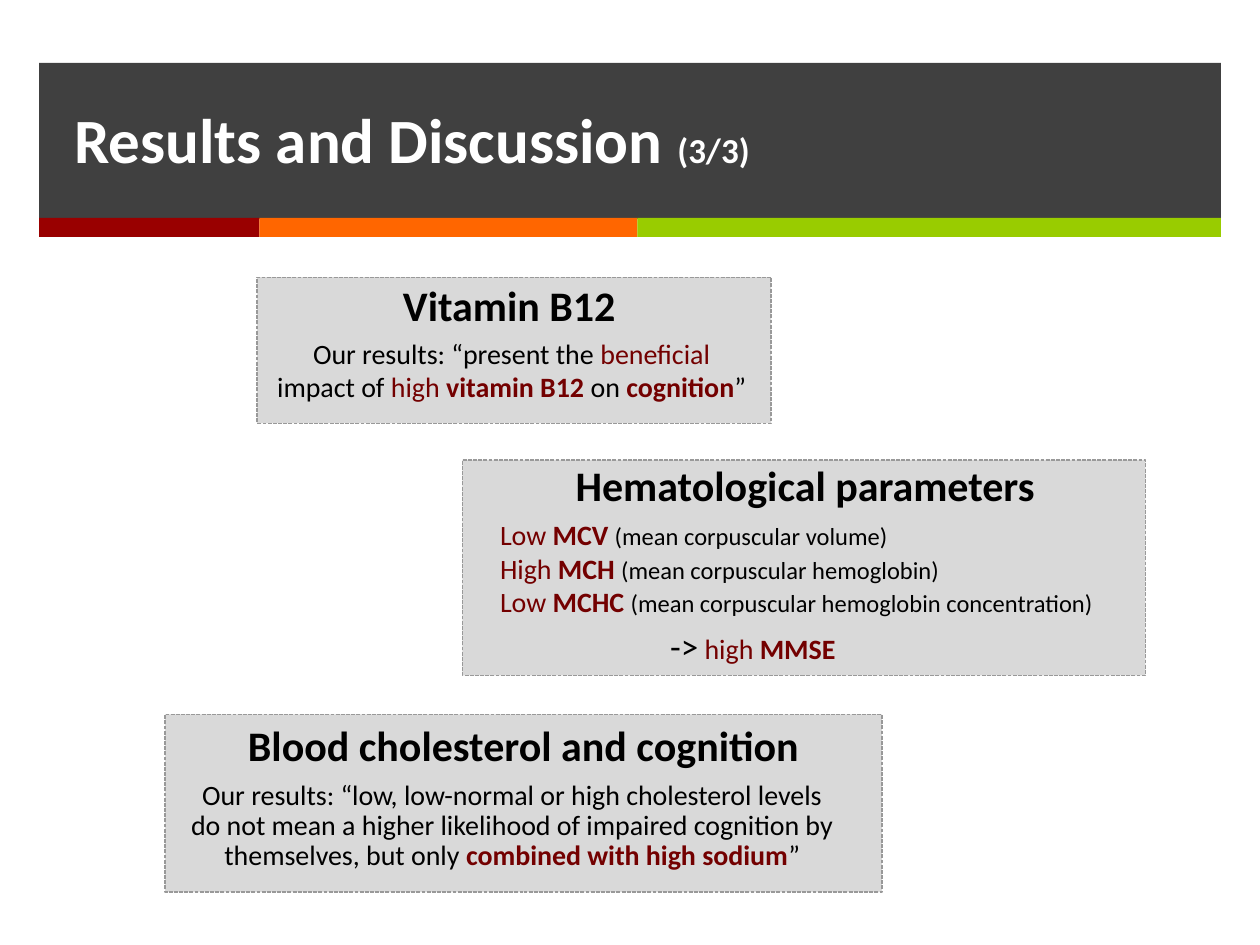
"""Build the third results slide: a title banner above three grey finding cards."""
from dataclasses import dataclass, field
from typing import Any, NamedTuple

import pptx
import pptx.dml.color
import pptx.enum.dml
import pptx.enum.shapes
import pptx.enum.text
import pptx.util

Align = pptx.enum.text.PP_ALIGN
COLUMNS, ROWS = 100, 75


class Box(NamedTuple):
    """Hold a place in columns and rows of the slide grid."""
    left: float
    top: float
    width: float
    height: float


class Run(NamedTuple):
    """Hold a piece of text in one style."""
    text: str
    size: int
    color: str
    bold: bool = False


@dataclass(frozen=True)
class Theme:
    """Hold the colours, type sizes and font of the slide."""
    font: str = "Calibri"
    banner: str = "404040"
    stripes: tuple[str, ...] = ("990000", "FF6600", "99CC00")
    card: str = "D9D9D9"
    border: str = "999999"
    ink: str = "000000"
    accent: str = "730000"
    light: str = "FFFFFF"
    title: int = 36
    heading: int = 24
    large: int = 20
    body: int = 16
    small: int = 14


THEME = Theme()


@dataclass(frozen=True)
class TextBlock:
    """Describe a text box and its paragraphs."""
    box: Box
    paragraphs: list[list[Run]]
    format: dict[str, Any] = field(default_factory=dict)


@dataclass(frozen=True)
class Card:
    """Describe a dashed card and the text it holds."""
    box: Box
    blocks: list[TextBlock]


def plain(text: str) -> Run:
    """Return body text in ink."""
    return Run(text, THEME.body, THEME.ink)


def accent(text: str, bold: bool = False) -> Run:
    """Return body text in the accent colour."""
    return Run(text, THEME.body, THEME.accent, bold)


def heading(text: str) -> list[list[Run]]:
    """Return the single paragraph of a card heading."""
    return [[Run(text, THEME.heading, THEME.ink, True)]]


def measure(level: str, name: str, meaning: str) -> list[Run]:
    """Return one line of the blood measures list."""
    return [accent(f"{level} "), accent(f"{name} ", True),
            Run(f"({meaning})", THEME.small, THEME.ink)]


TITLE = TextBlock(Box(4.9, 7.5, 72.3, 7.1), [[
    Run("Results and Discussion ", THEME.title, THEME.light, True),
    Run("(3/3)", THEME.large, THEME.light, True)]], {"alignment": Align.LEFT})

CARDS = [
    Card(Box(20.4, 22, 40.8, 11.6), [
        TextBlock(Box(31, 21.7, 20.3, 5), heading("Vitamin B12")),
        TextBlock(Box(20.7, 26.2, 39.8, 6.4), [[
            plain("Our results: “present the "), accent("beneficial"),
            plain(" impact of "), accent("high "), accent("vitamin B12 ", True),
            plain("on "), accent("cognition", True), plain("”")]],
            {"alignment": Align.CENTER}),
    ]),
    Card(Box(36.7, 36.5, 54.2, 17.1), [
        TextBlock(Box(44.7, 36, 38.9, 5), heading("Hematological parameters")),
        TextBlock(Box(38.7, 40.6, 49.9, 9.1), [
            measure("Low", "MCV", "mean corpuscular volume"),
            measure("High", "MCH", "mean corpuscular hemoglobin"),
            measure("Low", "MCHC", "mean corpuscular hemoglobin concentration")]),
        TextBlock(Box(52.2, 49.7, 23.6, 3.8), [[
            Run("->", THEME.large, THEME.ink), plain(" "),
            accent("high "), accent("MMSE", True)]], {"line_spacing": 0.8}),
    ]),
    Card(Box(13.1, 56.7, 56.9, 14.1), [
        TextBlock(Box(17.3, 56.6, 48.5, 5), heading("Blood cholesterol and cognition"),
                  {"alignment": Align.CENTER}),
        TextBlock(Box(13.9, 61.5, 53.5, 8.3), [[
            plain("Our results: “low, low-normal or high cholesterol levels do not mean "
                  "a higher likelihood of impaired cognition by themselves, but only "),
            accent("combined with high sodium", True), plain("”")]],
            {"alignment": Align.CENTER, "line_spacing": 0.9}),
    ]),
]


def rgb(color: str) -> pptx.dml.color.RGBColor:
    """Return a colour from its hex code."""
    return pptx.dml.color.RGBColor.from_string(color)


def apply(target: Any, values: dict[str, Any]) -> None:
    """Set each named attribute on the target."""
    for name, value in values.items():
        setattr(target, name, value)


def place(box: Box) -> dict[str, int]:
    """Return the slide lengths of a grid box."""
    column = pptx.util.Inches(10) / COLUMNS
    row = pptx.util.Inches(7.5) / ROWS
    return {"left": round(box.left * column), "top": round(box.top * row),
            "width": round(box.width * column), "height": round(box.height * row)}


def draw_rectangle(slide: Any, box: Box, color: str) -> Any:
    """Draw a flat rectangle without a line."""
    shape = slide.shapes.add_shape(
        pptx.enum.shapes.MSO_SHAPE.RECTANGLE, **place(box))
    shape.shadow.inherit = False
    shape.fill.solid()
    shape.fill.fore_color.rgb = rgb(color)
    shape.line.fill.background()
    return shape


def write_text(shape: Any, block: TextBlock) -> None:
    """Write the paragraphs of a block into a shape."""
    frame = shape.text_frame
    apply(frame, {"word_wrap": True,
                  "auto_size": pptx.enum.text.MSO_AUTO_SIZE.SHAPE_TO_FIT_TEXT,
                  "vertical_anchor": pptx.enum.text.MSO_ANCHOR.TOP})
    for index, runs in enumerate(block.paragraphs):
        paragraph = frame.add_paragraph() if index else frame.paragraphs[0]
        apply(paragraph, block.format)
        for item in runs:
            run = paragraph.add_run()
            run.text = item.text
            apply(run.font, {"name": THEME.font, "size": pptx.util.Pt(item.size),
                             "bold": item.bold})
            run.font.color.rgb = rgb(item.color)


def draw_banner(slide: Any) -> None:
    """Draw the banner, its stripes and the title."""
    draw_rectangle(slide, Box(3.1, 5, 93.8, 12.4), THEME.banner)
    left = 3.1
    for width, color in zip((17.5, 30, 46.3), THEME.stripes):
        draw_rectangle(slide, Box(left, 17.3, width, 1.5), color)
        left += width
    title = slide.shapes.title
    apply(title, place(TITLE.box))
    write_text(title, TITLE)
    title.element.getparent().append(title.element)


def draw_card(slide: Any, card: Card) -> None:
    """Draw a dashed card and its text boxes."""
    shape = draw_rectangle(slide, card.box, THEME.card)
    shape.line.color.rgb = rgb(THEME.border)
    apply(shape.line, {"width": pptx.util.Pt(0.75),
                       "dash_style": pptx.enum.dml.MSO_LINE.SQUARE_DOT})
    for block in card.blocks:
        write_text(slide.shapes.add_textbox(**place(block.box)), block)


def main() -> None:
    """Build and save the presentation."""
    presentation = pptx.Presentation()
    apply(presentation, {"slide_width": pptx.util.Inches(10),
                         "slide_height": pptx.util.Inches(7.5)})
    slide = presentation.slides.add_slide(presentation.slide_layouts[5])
    draw_banner(slide)
    for card in CARDS:
        draw_card(slide, card)
    presentation.save("out.pptx")


if __name__ == "__main__":
    main()
